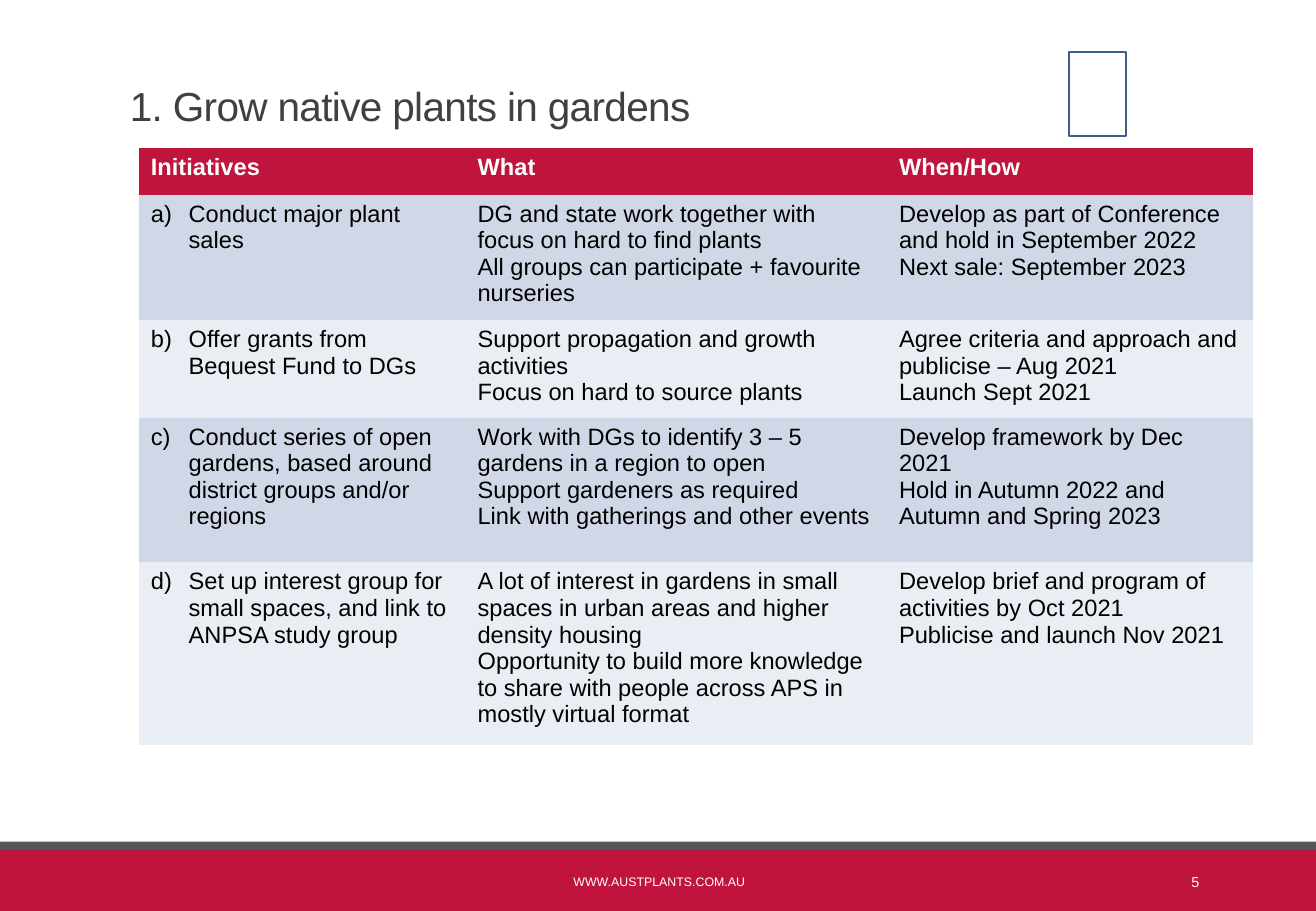
"""Build the slide on growing native plants in gardens."""
from dataclasses import dataclass

from lxml.etree import SubElement
from pptx import Presentation
from pptx.dml.color import RGBColor
from pptx.enum.shapes import MSO_SHAPE
from pptx.enum.text import MSO_ANCHOR, MSO_AUTO_SIZE, PP_ALIGN
from pptx.oxml.ns import qn
from pptx.slide import Slide
from pptx.table import _Cell
from pptx.text.text import _Paragraph
from pptx.util import Cm, Pt

FONT = "Arial"
RED, GREY, WHITE, BLACK = "C0143C", "54585B", "FFFFFF", "000000"
HEADER_FILL, BAND_FILLS = "BF143B", ("D0D8E8", "E9EDF4")
COLUMN_WIDTHS = (6.83, 8.81, 7.65)
HEADER_HEIGHT = 0.97
HEADINGS = ("Initiatives", "What", "When/How")


@dataclass(frozen=True)
class Area:
    left: float
    top: float
    width: float
    height: float

    def lengths(self) -> tuple[Cm, Cm, Cm, Cm]:
        return Cm(self.left), Cm(self.top), Cm(self.width), Cm(self.height)


@dataclass(frozen=True)
class Panel:
    area: Area
    fill: str | None = None
    line: str | None = None


@dataclass(frozen=True)
class Label:
    area: Area
    text: str
    size: float
    align: PP_ALIGN


@dataclass(frozen=True)
class Initiative:
    height: float
    name: str
    what: str
    when: str


PANELS = (
    Panel(Area(0, 17.78, 27.51, 1.27), fill=RED),
    Panel(Area(0, 17.6, 27.51, 0.18), fill=GREY),
    Panel(Area(22.35, 1.09, 1.19, 1.75), line="3A5F8C"),
)
LABELS = (
    Label(Area(8.33, 17.93, 10.9, 1.02), "WWW.AUSTPLANTS.COM.AU", 7.3, PP_ALIGN.CENTER),
    Label(Area(22.35, 17.93, 2.97, 1.02), "5", 8.5, PP_ALIGN.RIGHT),
)
INITIATIVES = (
    Initiative(
        2.47,
        "Conduct major plant sales",
        "DG and state work together with focus on hard to find plants\n"
        "All groups can participate + favourite nurseries",
        "Develop as part of Conference and hold in September 2022\n"
        "Next sale: September 2023",
    ),
    Initiative(
        1.92,
        "Offer grants from Bequest Fund to DGs",
        "Support propagation and growth activities\nFocus on hard to source plants",
        "Agree criteria and approach and publicise – Aug 2021\nLaunch Sept 2021",
    ),
    Initiative(
        3.03,
        "Conduct series of open gardens, based around district groups and/or regions",
        "Work with DGs to identify 3 – 5 gardens in a region to open\n"
        "Support gardeners as required\nLink with gatherings and other events",
        "Develop framework by Dec 2021\nHold in Autumn 2022 and Autumn and Spring 2023",
    ),
    Initiative(
        3.6,
        "Set up interest group for small spaces, and link to ANPSA study group",
        "A lot of interest in gardens in small spaces in urban areas and higher density housing\n"
        "Opportunity to build more knowledge to share with people across APS "
        "in mostly virtual format",
        "Develop brief and program of activities by Oct 2021\nPublicise and launch Nov 2021",
    ),
)


def colour(value: str) -> RGBColor:
    return RGBColor.from_string(value)


def format_runs(para: _Paragraph, size: float, ink: str, bold: bool = False) -> None:
    for span in para.runs:
        span.font.name = FONT
        span.font.size = Pt(size)
        span.font.bold = bold
        span.font.color.rgb = colour(ink)


def number_paragraph(para: _Paragraph, start: int) -> None:
    properties = para._p.get_or_add_pPr()
    properties.set("marL", str(Cm(0.79)))
    properties.set("indent", str(-Cm(0.79)))
    numbering = SubElement(properties, qn("a:buAutoNum"), type="alphaLcParenR")
    if start > 1:
        numbering.set("startAt", str(start))


def draw_panel(page: Slide, panel: Panel) -> None:
    shape = page.shapes.add_shape(MSO_SHAPE.RECTANGLE, *panel.area.lengths())
    shape.shadow.inherit = False
    if panel.fill:
        shape.fill.solid()
        shape.fill.fore_color.rgb = colour(panel.fill)
    else:
        shape.fill.background()
    if panel.line:
        shape.line.color.rgb = colour(panel.line)
        shape.line.width = Pt(1.25)
    else:
        shape.line.fill.background()


def draw_label(page: Slide, label: Label) -> None:
    box = page.shapes.add_textbox(*label.area.lengths())
    frame = box.text_frame
    frame.word_wrap = True
    frame.vertical_anchor = MSO_ANCHOR.MIDDLE
    frame.text = label.text
    para = frame.paragraphs[0]
    para.alignment = label.align
    format_runs(para, label.size, WHITE)


def draw_title(page: Slide, text: str) -> None:
    title = page.shapes.title
    title.left, title.top, title.width, title.height = Area(2.46, 1.09, 22.71, 1.75).lengths()
    frame = title.text_frame
    frame.text = text
    frame.word_wrap = True
    frame.auto_size = MSO_AUTO_SIZE.NONE
    frame.vertical_anchor = MSO_ANCHOR.BOTTOM
    para = frame.paragraphs[0]
    para.alignment = PP_ALIGN.LEFT
    para.line_spacing = 0.85
    format_runs(para, 24, "404040")
    for span in para.runs:
        span.font._element.set("spc", "-40")


def fill_cell(cell: _Cell, text: str, fill: str, ink: str, bold: bool = False) -> None:
    cell.fill.solid()
    cell.fill.fore_color.rgb = colour(fill)
    cell.text_frame.text = text
    for para in cell.text_frame.paragraphs:
        format_runs(para, 14, ink, bold)


def draw_table(page: Slide) -> None:
    heights = (HEADER_HEIGHT, *(item.height for item in INITIATIVES))
    area = Area(2.9, 3.1, sum(COLUMN_WIDTHS), sum(heights))
    table = page.shapes.add_table(len(heights), len(HEADINGS), *area.lengths()).table
    for column, width in zip(table.columns, COLUMN_WIDTHS):
        column.width = Cm(width)
    for row, height in zip(table.rows, heights):
        row.height = Cm(height)
    borders = ("a:lnL", "a:lnR", "a:lnT", "a:lnB")
    for index, heading in enumerate(HEADINGS):
        fill_cell(table.cell(0, index), heading, HEADER_FILL, WHITE, bold=True)
    for number, item in enumerate(INITIATIVES, start=1):
        fill = BAND_FILLS[(number - 1) % 2]
        for index, text in enumerate((item.name, item.what, item.when)):
            fill_cell(table.cell(number, index), text, fill, BLACK)
        number_paragraph(table.cell(number, 0).text_frame.paragraphs[0], number)
    for cell in table.iter_cells():
        properties = cell._tc.get_or_add_tcPr()
        for position, border in enumerate(borders):
            line = SubElement(properties, qn(border), w="0")
            SubElement(line, qn("a:noFill"))
            properties.insert(position, line)


def main() -> None:
    deck = Presentation()
    deck.slide_width, deck.slide_height = Cm(27.51), Cm(19.05)
    page = deck.slides.add_slide(deck.slide_layouts[5])
    draw_title(page, "1. Grow native plants in gardens")
    for panel in PANELS:
        draw_panel(page, panel)
    for label in LABELS:
        draw_label(page, label)
    draw_table(page)
    deck.save("out.pptx")


if __name__ == "__main__":
    main()
